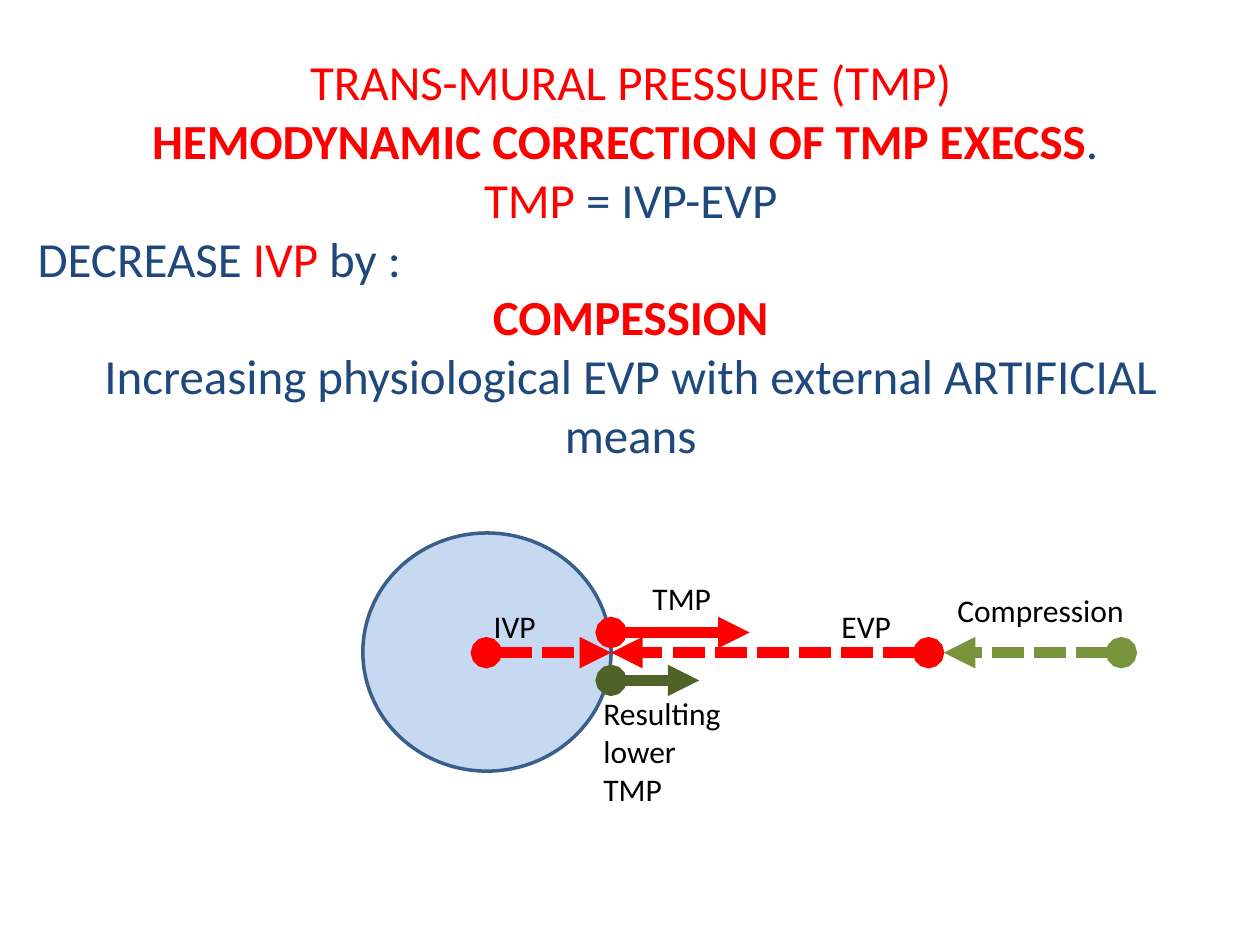
from dataclasses import dataclass

from lxml import etree
from pptx import Presentation
from pptx.dml.color import RGBColor
from pptx.enum.dml import MSO_LINE
from pptx.enum.shapes import MSO_CONNECTOR, MSO_SHAPE
from pptx.enum.text import MSO_AUTO_SIZE, PP_ALIGN
from pptx.oxml.ns import qn
from pptx.util import Inches, Pt

FONT = "Calibri"
RED = RGBColor(0xFF, 0x00, 0x00)
NAVY = RGBColor(0x1F, 0x49, 0x7D)
BLACK = RGBColor(0x00, 0x00, 0x00)
PALE_BLUE = RGBColor(0xC6, 0xD9, 0xF1)
OUTLINE_BLUE = RGBColor(0x3A, 0x5F, 0x8C)
GREEN = RGBColor(0x77, 0x93, 0x3C)
DARK_GREEN = RGBColor(0x4F, 0x62, 0x28)

AXIS_Y = 5.18  # height of the dashed pressure arrows
WALL_X = 4.85  # right edge of the vessel


@dataclass
class Span:
    text: str
    color: RGBColor
    bold: bool = False


@dataclass
class Line:
    spans: list[Span]
    align: PP_ALIGN = PP_ALIGN.CENTER


@dataclass
class Arrow:
    start: float
    end: float
    y: float
    color: RGBColor
    dashed: bool = False


@dataclass
class Label:
    text: str
    left: float
    top: float
    width: float = 1.18
    height: float = 0.4


HEADING = [
    Line([Span("TRANS-MURAL PRESSURE (TMP)", RED)]),
    Line([Span("HEMODYNAMIC CORRECTION OF TMP EXECSS", RED, True), Span(". ", NAVY)]),
    Line([Span("TMP ", RED), Span("= IVP-EVP", NAVY)]),
    Line([Span("DECREASE ", NAVY), Span("IVP", RED), Span(" by :", NAVY)], PP_ALIGN.LEFT),
    Line([Span("COMPESSION", RED, True)]),
    Line([Span("Increasing physiological EVP with external ARTIFICIAL means", NAVY)]),
]

ARROWS = [
    Arrow(7.37, WALL_X, AXIS_Y, RED, True),
    Arrow(3.86, WALL_X, AXIS_Y, RED, True),
    Arrow(WALL_X, 5.95, 5.02, RED),
    Arrow(8.9, 7.49, AXIS_Y, GREEN, True),
    Arrow(WALL_X, 5.55, 5.4, DARK_GREEN),
]

LABELS = [
    Label("IVP", 3.82, 4.77),
    Label("EVP", 6.58, 4.77),
    Label("TMP", 5.08, 4.55),
    Label("Compression", 7.5, 4.64, width=1.57),
    Label("Resulting lower TMP", 4.69, 5.46, height=1.01),
]


def add_text(page, left: float, top: float, width: float, height: float,
             lines: list[Line], size: int) -> None:
    box = page.shapes.add_textbox(Inches(left), Inches(top), Inches(width), Inches(height))
    frame = box.text_frame
    frame.word_wrap = True
    frame.auto_size = MSO_AUTO_SIZE.SHAPE_TO_FIT_TEXT
    for index, line in enumerate(lines):
        para = frame.add_paragraph() if index else frame.paragraphs[0]
        para.alignment = line.align
        para.font.name = FONT
        para.font.size = Pt(size)
        for span in line.spans:
            run = para.add_run()
            run.text = span.text
            run.font.bold = span.bold
            run.font.color.rgb = span.color


def add_vessel(page) -> None:
    vessel = page.shapes.add_shape(
        MSO_SHAPE.OVAL, Inches(2.88), Inches(4.23), Inches(1.97), Inches(1.89))
    vessel.shadow.inherit = False
    vessel.fill.solid()
    vessel.fill.fore_color.rgb = PALE_BLUE
    vessel.line.color.rgb = OUTLINE_BLUE
    vessel.line.width = Pt(2)


def add_arrow(page, arrow: Arrow) -> None:
    connector = page.shapes.add_connector(
        MSO_CONNECTOR.STRAIGHT, Inches(arrow.start), Inches(arrow.y),
        Inches(arrow.end), Inches(arrow.y))
    connector.line.color.rgb = arrow.color
    connector.line.width = Pt(6)
    if arrow.dashed:
        connector.line.dash_style = MSO_LINE.SQUARE_DOT
    properties = connector.element.spPr
    outline = properties.find(qn("a:ln"))
    etree.SubElement(outline, qn("a:headEnd"), type="oval")
    etree.SubElement(outline, qn("a:tailEnd"), type="triangle")
    etree.SubElement(properties, qn("a:effectLst"))


def main() -> None:
    deck = Presentation()
    deck.slide_width = Inches(10)
    deck.slide_height = Inches(7.5)
    page = deck.slides.add_slide(deck.slide_layouts[6])

    # Heading and explanation
    add_text(page, 0.2, 0.36, 9.61, 4.01, HEADING, 28)

    # Vessel with its pressure arrows
    add_vessel(page)
    for arrow in ARROWS:
        add_arrow(page, arrow)

    # Arrow labels
    for label in LABELS:
        add_text(page, label.left, label.top, label.width, label.height,
                 [Line([Span(label.text, BLACK)], PP_ALIGN.LEFT)], 18)

    deck.save("out.pptx")


if __name__ == "__main__":
    main()
